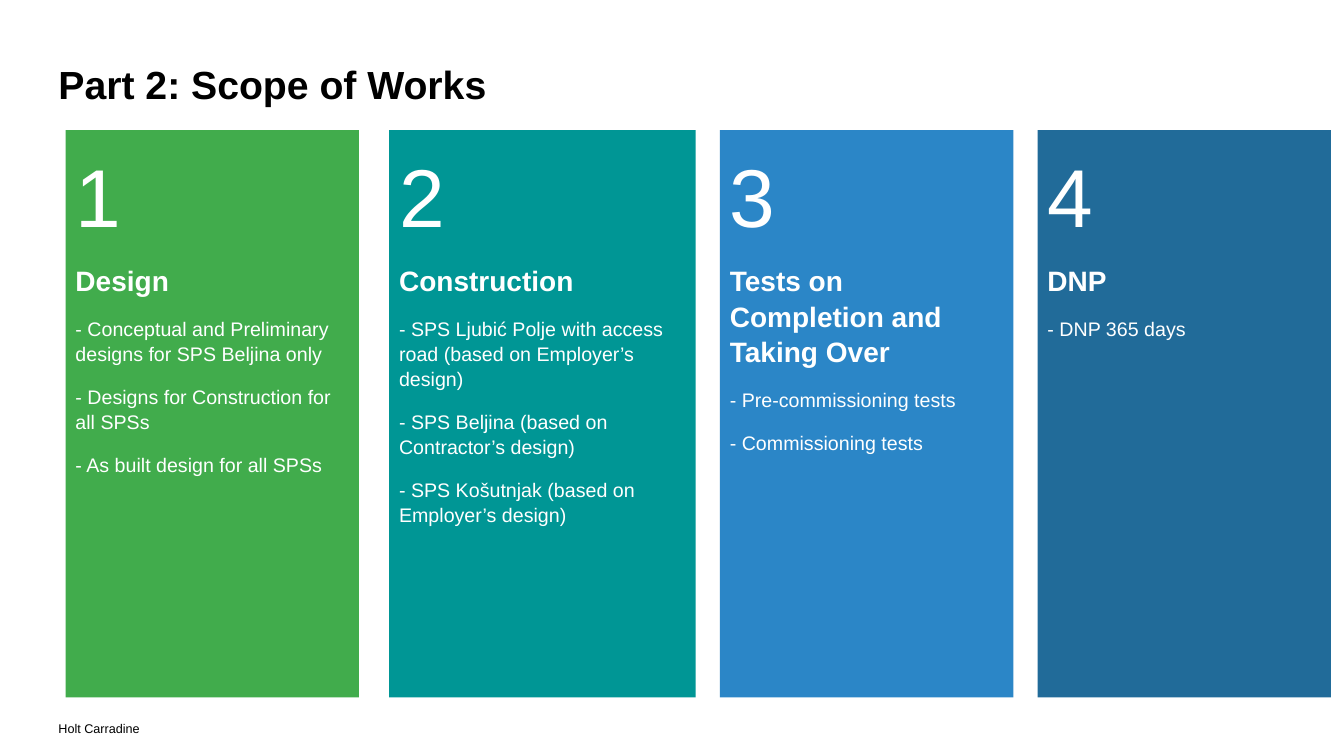
from dataclasses import dataclass
from pptx import Presentation
from pptx.dml.color import RGBColor
from pptx.enum import shapes, text
from pptx.util import Inches, Pt


@dataclass(frozen=True)
class Theme:
    font: str = "Arial"
    black: str = "000000"
    white: str = "FFFFFF"
    green: str = "41AC4C"
    teal: str = "009695"
    blue: str = "2B86C7"
    navy: str = "216B99"
    title: float = 28
    number: float = 58.6
    heading: float = 20
    item: float = 14
    footer: float = 9
    gap: float = 13.3
    line_spacing: float = 1.05


THEME = Theme()
PANEL_TOP, PANEL_HEIGHT = 1.29, 5.63

# Left, width, colour, heading, items
PANELS = [
    (0.65, 2.91, THEME.green, "Design", [
        "Conceptual and Preliminary designs for SPS Beljina only",
        "Designs for Construction for all SPSs",
        "As built design for all SPSs"]),
    (3.86, 3.04, THEME.teal, "Construction", [
        "SPS Ljubić Polje with access road (based on Employer’s design)",
        "SPS Beljina (based on Contractor’s design)",
        "SPS Košutnjak (based on Employer’s design)"]),
    (7.14, 2.91, THEME.blue, "Tests on Completion and Taking Over", [
        "Pre-commissioning tests", "Commissioning tests"]),
    (10.29, 2.91, THEME.navy, "DNP", ["DNP 365 days"]),
]


def set_font(font, size, color, bold=False):
    font.name = THEME.font
    font.size = Pt(size)
    font.bold = bold
    font.color.rgb = RGBColor.from_string(color)


def set_frame(frame, inset, anchor):
    frame.word_wrap = True
    frame.auto_size = text.MSO_AUTO_SIZE.NONE
    frame.vertical_anchor = anchor
    frame.margin_left = frame.margin_right = Inches(inset)
    frame.margin_top = frame.margin_bottom = Inches(inset)


def add_title(slide, wording):
    title = slide.shapes.title
    title.left, title.top = Inches(0.58), Inches(0.58)
    title.width, title.height = Inches(12.18), Inches(0.5)
    set_frame(title.text_frame, 0, text.MSO_ANCHOR.MIDDLE)
    paragraph = title.text_frame.paragraphs[0]
    paragraph.text = wording
    paragraph.alignment = text.PP_ALIGN.LEFT
    set_font(paragraph.font, THEME.title, THEME.black, True)


def add_panel(slide, number, left, width, color, heading, items):
    panel = slide.shapes.add_shape(
        shapes.MSO_SHAPE.RECTANGLE, Inches(left), Inches(PANEL_TOP),
        Inches(width), Inches(PANEL_HEIGHT))
    panel.shadow.inherit = False
    panel.fill.solid()
    panel.fill.fore_color.rgb = RGBColor.from_string(color)
    panel.line.fill.background()
    frame = panel.text_frame
    set_frame(frame, 0.1, text.MSO_ANCHOR.TOP)

    lines = [(str(number), THEME.number, False), (heading, THEME.heading, True)]
    lines += [(f"- {item}", THEME.item, False) for item in items]
    for index, (wording, size, bold) in enumerate(lines):
        paragraph = frame.add_paragraph() if index else frame.paragraphs[0]
        paragraph.text = wording
        paragraph.alignment = text.PP_ALIGN.LEFT
        paragraph.line_spacing = THEME.line_spacing
        paragraph.space_after = Pt(THEME.gap)
        set_font(paragraph.font, size, THEME.white, bold)


def add_footer(slide, wording):
    footer = slide.shapes.add_textbox(
        Inches(0.58), Inches(7.15), Inches(2.41), Inches(0.16))
    set_frame(footer.text_frame, 0, text.MSO_ANCHOR.TOP)
    paragraph = footer.text_frame.paragraphs[0]
    paragraph.text = wording
    set_font(paragraph.font, THEME.footer, THEME.black)


def main():
    presentation = Presentation()
    presentation.slide_width = Inches(13.33)
    presentation.slide_height = Inches(7.5)
    slide = presentation.slides.add_slide(presentation.slide_layouts[5])

    add_title(slide, "Part 2: Scope of Works")
    for number, panel in enumerate(PANELS, start=1):
        add_panel(slide, number, *panel)
    add_footer(slide, "Holt Carradine")
    presentation.save("out.pptx")


if __name__ == "__main__":
    main()
